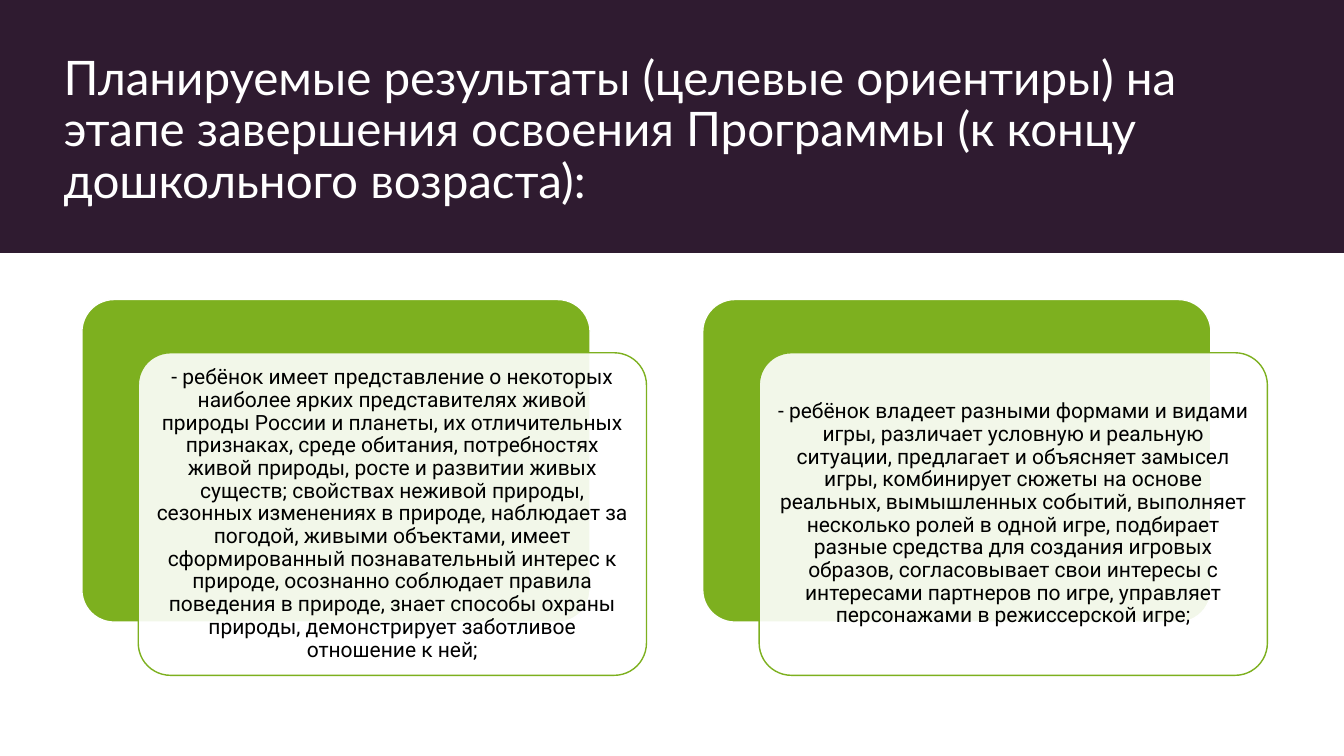
from lxml import etree
from pptx import Presentation
from pptx.dml.color import RGBColor
from pptx.enum.shapes import MSO_SHAPE
from pptx.enum.text import MSO_ANCHOR, MSO_AUTO_SIZE, PP_ALIGN
from pptx.oxml.ns import qn
from pptx.util import Pt

RECT = MSO_SHAPE.RECTANGLE
ROUND = MSO_SHAPE.ROUNDED_RECTANGLE
BOTTOM = MSO_ANCHOR.BOTTOM
MIDDLE = MSO_ANCHOR.MIDDLE
LEFT = PP_ALIGN.LEFT
CENTER = PP_ALIGN.CENTER
FIXED = MSO_AUTO_SIZE.NONE

GREEN = "7DB01F"
WHITE = "FFFFFF"
PLUM = "2F1B30"
BLACK = "000000"

HEADING = (
    "Планируемые результаты (целевые ориентиры) на этапе завершения "
    "освоения Программы (к концу дошкольного возраста):"
)
GOALS = [
    "- ребёнок имеет представление о некоторых наиболее ярких представителях "
    "живой природы России и планеты, их отличительных признаках, среде обитания, "
    "потребностях живой природы, росте и развитии живых существ; свойствах "
    "неживой природы, сезонных изменениях в природе, наблюдает за погодой, "
    "живыми объектами, имеет сформированный познавательный интерес к природе, "
    "осознанно соблюдает правила поведения в природе, знает способы охраны "
    "природы, демонстрирует заботливое отношение к ней;",
    "- ребёнок владеет разными формами и видами игры, различает условную и "
    "реальную ситуации, предлагает и объясняет замысел игры, комбинирует сюжеты "
    "на основе реальных, вымышленных событий, выполняет несколько ролей в одной "
    "игре, подбирает разные средства для создания игровых образов, "
    "согласовывает свои интересы с интересами партнеров по игре, управляет "
    "персонажами в режиссерской игре;",
]


def draw(kind, left, top, width, height, fill, line=None):
    shape = slide.shapes.add_shape(kind, Pt(left), Pt(top), Pt(width), Pt(height))
    shape.shadow.inherit = False
    shape.fill.solid()
    shape.fill.fore_color.rgb = RGBColor.from_string(fill)
    if line:
        shape.adjustments[0] = 0.1
        shape.line.color.rgb = RGBColor.from_string(line)
        shape.line.width = Pt(1)
    else:
        shape.line.fill.background()
    return shape


def write(shape, text, font, size, color, align, anchor):
    frame = shape.text_frame
    frame.text = text
    frame.word_wrap = True
    frame.auto_size = FIXED
    frame.vertical_anchor = anchor
    para = frame.paragraphs[0]
    para.alignment = align
    para.line_spacing = 0.9
    para.font.name = font
    para.font.size = Pt(size)
    para.font.color.rgb = RGBColor.from_string(color)
    return frame


deck = Presentation()
deck.slide_width = Pt(960)
deck.slide_height = Pt(540)
slide = deck.slides.add_slide(deck.slide_layouts[5])

draw(RECT, 0, 0, 960, 180.7, PLUM)

title = slide.shapes.title
title.left, title.top, title.width, title.height = Pt(38.2), Pt(28.8), Pt(856), Pt(123.8)
write(title, HEADING, "Lato", 34, WHITE, LEFT, BOTTOM)
slide.shapes.element.append(title.element)

for index, goal in enumerate(GOALS):
    left, top = 58.5 + index * 443.5, 214
    draw(ROUND, left, top, 363, 230.4, GREEN, WHITE)
    card = draw(ROUND, left + 40.3, top + 38, 363, 230.4, WHITE, GREEN)
    color = card.element.spPr.find(qn("a:solidFill"))[0]
    etree.SubElement(color, qn("a:alpha"), val="90000")
    frame = write(card, goal, "Roboto", 15, BLACK, CENTER, MIDDLE)
    frame.margin_left = frame.margin_right = Pt(4.5)
    frame.margin_top = frame.margin_bottom = Pt(4.5)

deck.save("out.pptx")
